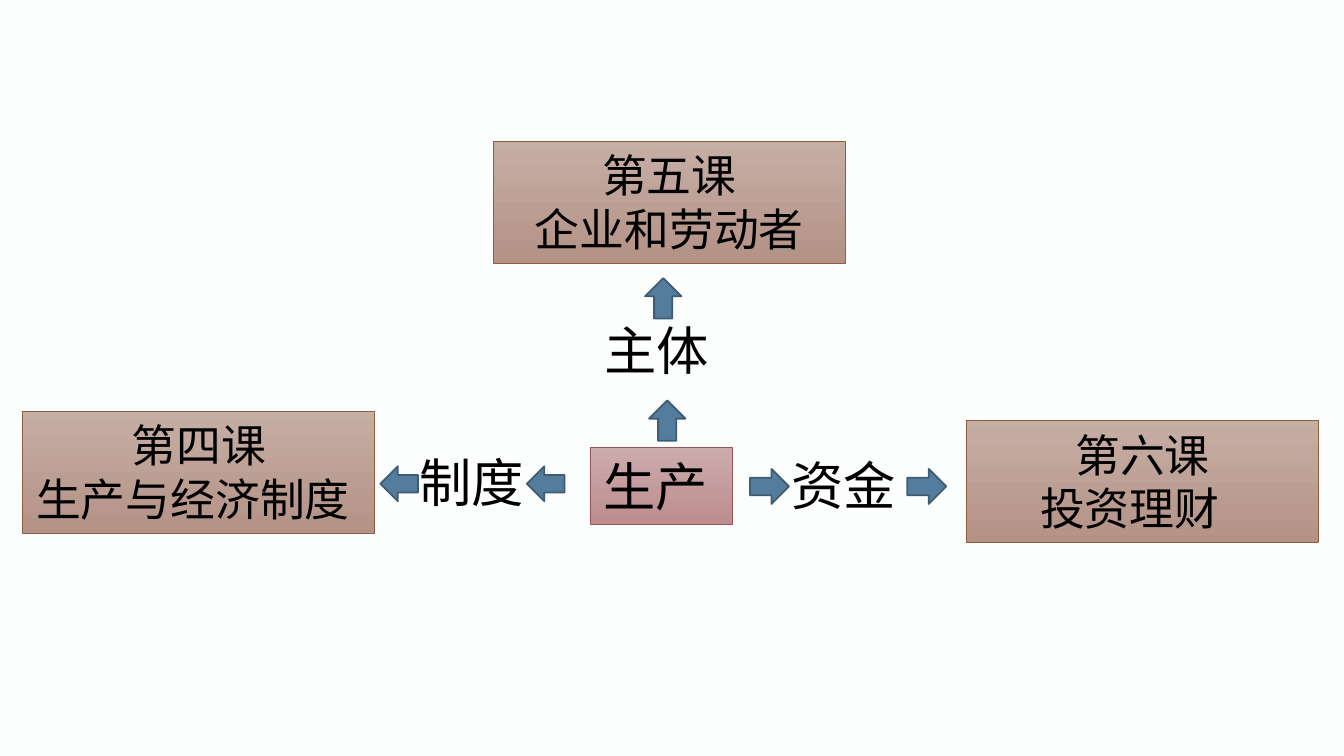
"""Build a slide linking production to its system, actors and funding lessons."""
from lxml.etree import SubElement
from pptx import Presentation
from pptx.dml.color import RGBColor
from pptx.enum.shapes import MSO_SHAPE as Shape
from pptx.enum.text import MSO_ANCHOR as Anchor, PP_ALIGN as Align
from pptx.oxml.ns import qn
from pptx.util import Inches, Pt

COLORS = {
    "background": "FCFDFD", "text": "000000",
    "core": ("CCABAC", "BD8D8F"), "core_line": "9D5458",
    "lesson": ("C6AEA5", "B49286"), "lesson_line": "905E43",
    "arrow": "547D9D", "arrow_line": "3E5C74",
}
CJK = "Noto Sans CJK SC"
SLIDE_WIDTH = 10
LESSON_SIZE = (2.62, 0.91)
CORE = ("生产", 4.39, 3.33, 1.06, 0.57)
LESSONS = [
    ("第四课", "生产与经济制度", 0.17, 3.06, Align.LEFT, 0),
    ("第五课", "企业和劳动者", 3.67, 1.05, Align.CENTER, 0),
    ("第六课", "投资理财", 7.19, 3.13, Align.LEFT, 0.45),
]
LINKS = [("制度", 3.02, 3.3, 1.12), ("主体", 4.4, 2.32, 1.17), ("资金", 5.79, 3.32, 1.17)]
ARROWS = [
    (Shape.LEFT_ARROW, 0.28, 0.26, [(3.92, 3.47), (2.83, 3.47)]),
    (Shape.RIGHT_ARROW, 0.29, 0.26, [(5.58, 3.49), (6.75, 3.49)]),
    (Shape.UP_ARROW, 0.27, 0.3, [(4.83, 2.98), (4.8, 2.07)]),
]


def rgb(name):
    return RGBColor.from_string(name)


def write(paragraph, text, size, font, align=Align.LEFT, indent=0):
    paragraph.text = text
    paragraph.alignment = align
    paragraph.font.size = Pt(size)
    paragraph.font.name = font
    paragraph.font.color.rgb = rgb(COLORS["text"])
    props = paragraph._p.get_or_add_pPr()
    SubElement(props.find(qn("a:defRPr")), qn("a:ea"), typeface=CJK)
    if indent:
        props.set("marL", str(Inches(indent)))


def add_figure(slide, kind, place, line, width):
    figure = slide.shapes.add_shape(kind, *map(Inches, place))
    figure.shadow.inherit = False
    figure.line.color.rgb = rgb(line)
    figure.line.width = Pt(width)
    return figure


def add_box(slide, place, role):
    box = add_figure(slide, Shape.RECTANGLE, place, COLORS[role + "_line"], 0.5)
    box.fill.gradient()
    box.fill.gradient_angle = 270
    for stop, position, color in zip(box.fill.gradient_stops, (0, 1), COLORS[role]):
        stop.position = position
        stop.color.rgb = rgb(color)
    box.text_frame.vertical_anchor = Anchor.TOP
    box.text_frame.word_wrap = True
    return box.text_frame


def main():
    deck = Presentation()
    deck.slide_width, deck.slide_height = Inches(SLIDE_WIDTH), Inches(SLIDE_WIDTH * 9 / 16)
    slide = deck.slides.add_slide(deck.slide_layouts[6])
    slide.background.fill.solid()
    slide.background.fill.fore_color.rgb = rgb(COLORS["background"])

    topic, *place = CORE
    write(add_box(slide, place, "core").paragraphs[0], topic, 28, "Arial")

    for number, title, left, top, align, indent in LESSONS:
        frame = add_box(slide, (left, top, *LESSON_SIZE), "lesson")
        write(frame.paragraphs[0], number, 24, "Arial", Align.CENTER)
        write(frame.add_paragraph(), title, 24, "Arial", align, indent)

    for link, left, top, width in LINKS:
        label = slide.shapes.add_textbox(*map(Inches, (left, top, width, 0.57)))
        label.text_frame.word_wrap = True
        write(label.text_frame.paragraphs[0], link, 28, CJK)

    for kind, width, height, corners in ARROWS:
        for corner in corners:
            arrow = add_figure(slide, kind, (*corner, width, height), COLORS["arrow_line"], 1)
            arrow.fill.solid()
            arrow.fill.fore_color.rgb = rgb(COLORS["arrow"])

    deck.save("out.pptx")


if __name__ == "__main__":
    main()
